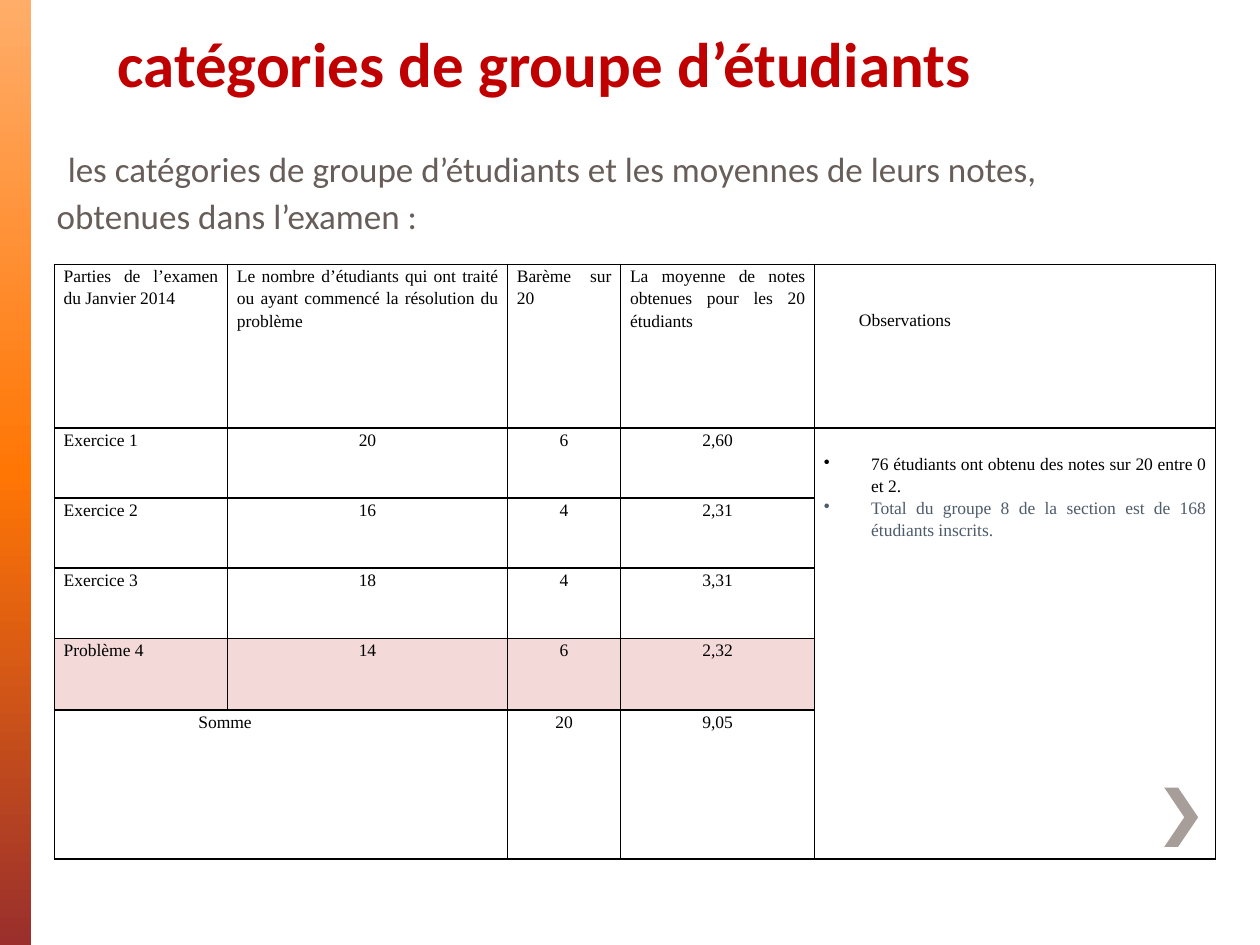
from copy import deepcopy
from dataclasses import dataclass

from lxml import etree
from pptx import Presentation
from pptx import util as u
from pptx.dml.color import RGBColor
from pptx.enum import shapes, text
from pptx.oxml.ns import qn

ALIGN = text.PP_ALIGN
BLACK, RED, GREY, SLATE = "000000", "C00000", "675D59", "4D5B6B"
PINK, TAUPE = "F4D9D9", "A79D99"
SANS, SERIF = "Calibri", "Times New Roman"


@dataclass
class Entry:
    """One paragraph of a table cell."""
    words: str
    align: int = ALIGN.JUSTIFY
    indent: float = 0
    bullet: bool = False
    color: str = BLACK


def rgb(code: str) -> RGBColor:
    return RGBColor.from_string(code)


def add_run(paragraph, words: str, font: str, size: float, color: str, bold: bool = False) -> None:
    run = paragraph.add_run()
    run.text = words
    run.font.name, run.font.size, run.font.bold = font, u.Pt(size), bold
    run.font.color.rgb = rgb(color)


def set_indent(paragraph, left: float, bullet: bool = False) -> None:
    """Indent a paragraph, with a hanging bullet or none."""
    props = paragraph._p.get_or_add_pPr()
    props.set("marL", str(u.Pt(left)))
    props.set("indent", str(u.Pt(-left if bullet else 0)))
    if bullet:
        etree.SubElement(props, qn("a:buChar")).set("char", "•")
    else:
        etree.SubElement(props, qn("a:buNone"))


def place(shape, left: float, top: float, width: float, height: float) -> None:
    shape.left, shape.top = u.Pt(left), u.Pt(top)
    shape.width, shape.height = u.Pt(width), u.Pt(height)


def add_borders(cell) -> None:
    props = cell._tc.get_or_add_tcPr()
    for side in ("lnL", "lnR", "lnT", "lnB"):
        line = etree.SubElement(props, qn(f"a:{side}"), w=str(u.Pt(1)))
        fill = etree.SubElement(line, qn("a:solidFill"))
        etree.SubElement(fill, qn("a:srgbClr")).set("val", BLACK)


def fill_cell(cell, entries: list[Entry], top: float = 0) -> None:
    cell.margin_left = cell.margin_right = u.Pt(5.4)
    cell.margin_top, cell.margin_bottom = u.Pt(top), 0
    for index, entry in enumerate(entries):
        frame = cell.text_frame
        paragraph = frame.add_paragraph() if index else frame.paragraphs[0]
        paragraph.alignment, paragraph.line_spacing = entry.align, 1.15
        set_indent(paragraph, entry.indent, entry.bullet)
        add_run(paragraph, entry.words, SERIF, 10, entry.color)


prs = Presentation()
prs.slide_width, prs.slide_height = u.Pt(720), u.Pt(540)
slide = prs.slides.add_slide(prs.slide_layouts[1])

# Title
title = slide.shapes.title
place(title, 60, 3, 570, 57.6)
title.text_frame.auto_size = text.MSO_AUTO_SIZE.NONE
title.text_frame.vertical_anchor = text.MSO_ANCHOR.BOTTOM
heading = title.text_frame.paragraphs[0]
heading.alignment = ALIGN.LEFT
add_run(heading, "catégories de groupe d’étudiants", SANS, 36, RED, bold=True)

# Introduction
body = slide.placeholders[1]
place(body, 25.2, 71.3, 648, 370.8)
body.text_frame.auto_size = text.MSO_AUTO_SIZE.NONE
intro = body.text_frame.paragraphs[0]
intro.line_spacing = 1.05
set_indent(intro, 0)
add_run(intro, " ", SANS, 28, GREY)
add_run(intro, "les catégories de groupe d’étudiants et les moyennes de leurs notes, "
        "obtenues dans l’examen :", SANS, 20, GREY)

# Side band with a three-colour gradient
band = slide.shapes.add_shape(shapes.MSO_SHAPE.RECTANGLE, 0, 0, u.Pt(18), prs.slide_height)
band.shadow.inherit = False
band.line.fill.background()
band.fill.gradient()
band.fill.gradient_angle = 270
first_stop = band._element.spPr.find(".//" + qn("a:gs"))
first_stop.addnext(deepcopy(first_stop))
for stop, (position, color) in zip(band.fill.gradient_stops,
                                   [(0, "FFAD69"), (0.5, "FF7605"), (1, "9A2F2C")]):
    stop.position = position
    stop.color.rgb = rgb(color)

# Chevron
builder = slide.shapes.build_freeform(u.Pt(673.2), u.Pt(450))
builder.add_line_segments([(u.Pt(x), u.Pt(y)) for x, y in
                           [(665.3, 450), (676.8, 467), (665.3, 484), (673.2, 484), (684.7, 467)]])
chevron = builder.convert_to_shape()
chevron.shadow.inherit = False
chevron.fill.solid()
chevron.fill.fore_color.rgb = rgb(TAUPE)
chevron.line.fill.background()

# Table grid
COLUMNS = [99, 160, 64.7, 110.8, 229]
ROWS = [93.7, 40, 40, 40.2, 40.8, 85.3]
marks = slide.shapes.add_table(len(ROWS), len(COLUMNS), u.Pt(31), u.Pt(151),
                               u.Pt(sum(COLUMNS)), u.Pt(sum(ROWS))).table
marks.first_row = marks.horz_banding = False
for column, width in zip(marks.columns, COLUMNS):
    column.width = u.Pt(width)
for row, height in zip(marks.rows, ROWS):
    row.height = u.Pt(height)
PROBLEM_ROW = 4
for r in range(len(ROWS)):
    for c in range(len(COLUMNS)):
        cell = marks.cell(r, c)
        add_borders(cell)
        if r == PROBLEM_ROW and c < 4:
            cell.fill.solid()
            cell.fill.fore_color.rgb = rgb(PINK)
        else:
            cell.fill.background()
marks.cell(1, 4).merge(marks.cell(5, 4))
marks.cell(5, 0).merge(marks.cell(5, 1))

# Header row
HEADERS = ["Parties de l’examen du Janvier 2014",
           "Le nombre d’étudiants qui ont traité ou ayant commencé la résolution du problème",
           "Barème sur 20",
           "La moyenne de notes obtenues pour les 20 étudiants"]
for c, header in enumerate(HEADERS):
    fill_cell(marks.cell(0, c), [Entry(header)])
fill_cell(marks.cell(0, 4), [Entry("Observations", indent=20)], top=25.2)

# Results
RESULTS = [("Exercice 1", "20", "6", "2,60"),
           ("Exercice 2", "16", "4", "2,31"),
           ("Exercice 3", "18", "4", "3,31"),
           ("Problème 4", "14", "6", "2,32"),
           ("Somme", None, "20", "9,05")]
for r, (part, *figures) in enumerate(RESULTS, start=1):
    fill_cell(marks.cell(r, 0), [Entry(part, indent=77 if part == "Somme" else 0)])
    for c, figure in enumerate(figures, start=1):
        if figure:
            fill_cell(marks.cell(r, c), [Entry(figure, ALIGN.CENTER)])

# Observations
fill_cell(marks.cell(1, 4), [
    Entry("76 étudiants ont obtenu des notes sur 20 entre 0 et 2.", indent=27, bullet=True),
    Entry("Total du groupe 8 de la section est de 168 étudiants inscrits.",
          indent=27, bullet=True, color=SLATE),
], top=13.5)

prs.save("out.pptx")
